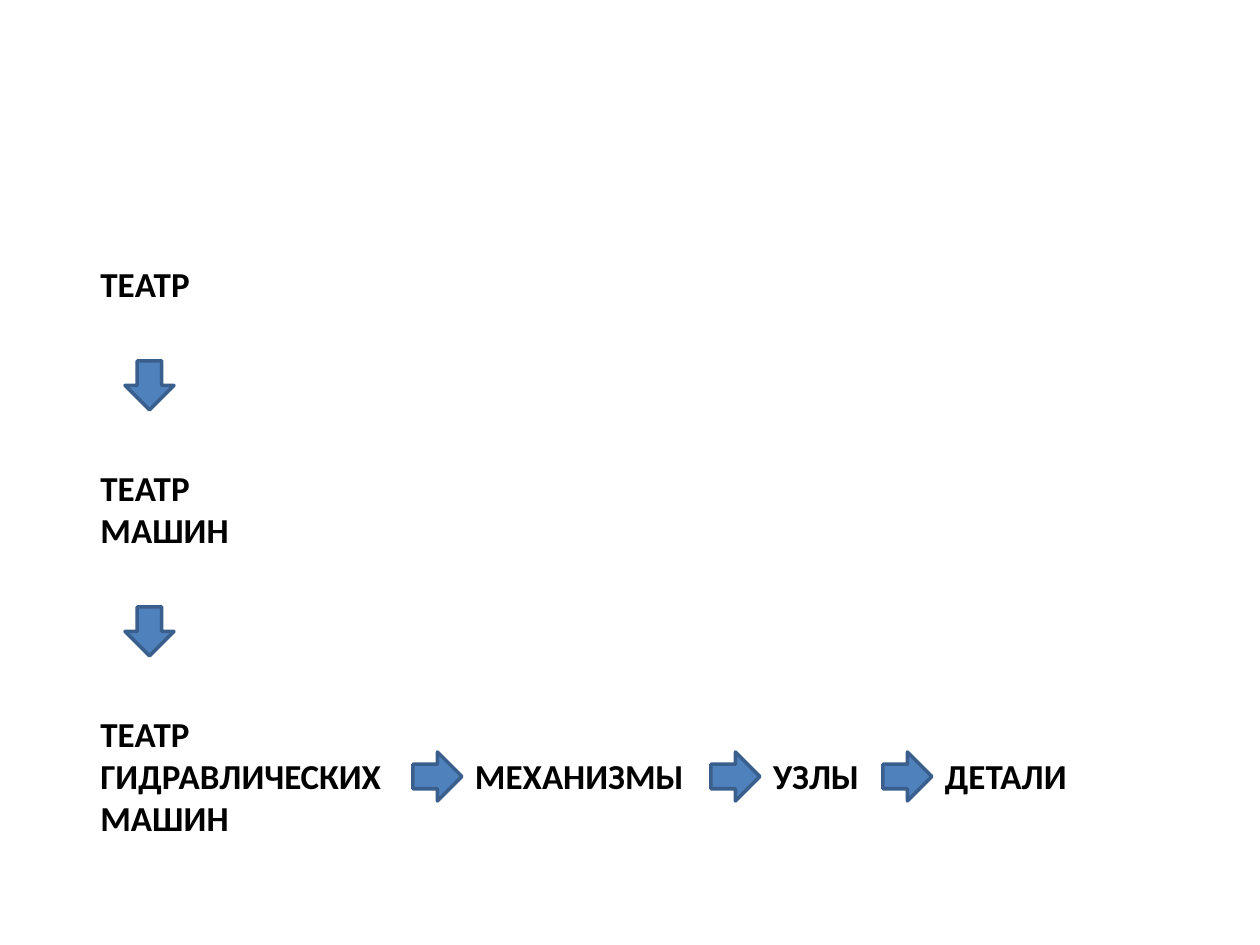
import pptx
import pptx.util
import pptx.dml.color
import pptx.enum.shapes
import pptx.enum.text
from dataclasses import dataclass

PX = 914400 / 126  # EMU per px


@dataclass(frozen=True)
class Theme:
    font: str = "Calibri"
    size: int = 20
    text: str = "000000"
    arrow_fill: str = "4F81BD"
    arrow_line: str = "3A5F8C"
    line_width: int = 2


THEME = Theme()
ARROW = 49       # side of an arrow's square box
COLUMN_GAP = 50  # between labels and arrows going down
ROW_GAP = 13     # between labels and arrows going right

# Label text, width, height, wrapping
STAGES = [
    ("ТЕАТР", 122, 55, False),
    ("ТЕАТР МАШИН", 168, 97, True),
    ("ТЕАТР ГИДРАВЛИЧЕСКИХ МАШИН", 325, 140, True),
]
# Label text, width
PARTS = [("МЕХАНИЗМЫ", 223), ("УЗЛЫ", 97), ("ДЕТАЛИ", 137)]


def emu(*lengths):
    return [pptx.util.Emu(round(n * PX)) for n in lengths]


def rgb(value):
    return pptx.dml.color.RGBColor.from_string(value)


def add_label(shapes, text, x, y, w, h, wrap=True, inset=True):
    sp = shapes.add_textbox(*emu(x, y, w, h))
    tf = sp.text_frame
    tf.word_wrap = wrap
    tf.auto_size = pptx.enum.text.MSO_AUTO_SIZE.SHAPE_TO_FIT_TEXT
    if not inset:
        tf.margin_left = tf.margin_right = 0
    p = tf.paragraphs[0]
    p.text = text
    p.font.name = THEME.font
    p.font.size = pptx.util.Pt(THEME.size)
    p.font.bold = True
    p.font.color.rgb = rgb(THEME.text)


def add_arrow(shapes, x, y, rotation=0):
    kind = pptx.enum.shapes.MSO_SHAPE.DOWN_ARROW
    sp = shapes.add_shape(kind, *emu(x, y, ARROW, ARROW))
    sp.rotation = rotation
    sp.shadow.inherit = False
    sp.fill.solid()
    sp.fill.fore_color.rgb = rgb(THEME.arrow_fill)
    sp.line.color.rgb = rgb(THEME.arrow_line)
    sp.line.width = pptx.util.Pt(THEME.line_width)


def add_stage_column(shapes, left, top):
    """Stages from top to bottom, with a down arrow between neighbours."""
    y = top
    for i, (text, w, h, wrap) in enumerate(STAGES):
        if i:
            add_arrow(shapes, left + 37, y)
            y += ARROW + COLUMN_GAP
        add_label(shapes, text, left, y, w, h, wrap)
        y += h + COLUMN_GAP


def add_part_row(shapes, left, top):
    """Parts from left to right, each led by a right arrow."""
    x = left
    for text, w in PARTS:
        add_arrow(shapes, x, top + 4, rotation=270)
        x += ARROW + ROW_GAP
        add_label(shapes, text, x, top, w, 55, inset=False)
        x += w + ROW_GAP


def main():
    prs = pptx.Presentation()
    prs.slide_width, prs.slide_height = emu(1260, 945)
    s = prs.slides.add_slide(prs.slide_layouts[6])
    diagram = s.shapes.add_group_shape()
    add_stage_column(diagram.shapes, 88, 256)
    add_part_row(diagram.shapes, 413, 748)
    prs.save("out.pptx")


if __name__ == "__main__":
    main()
